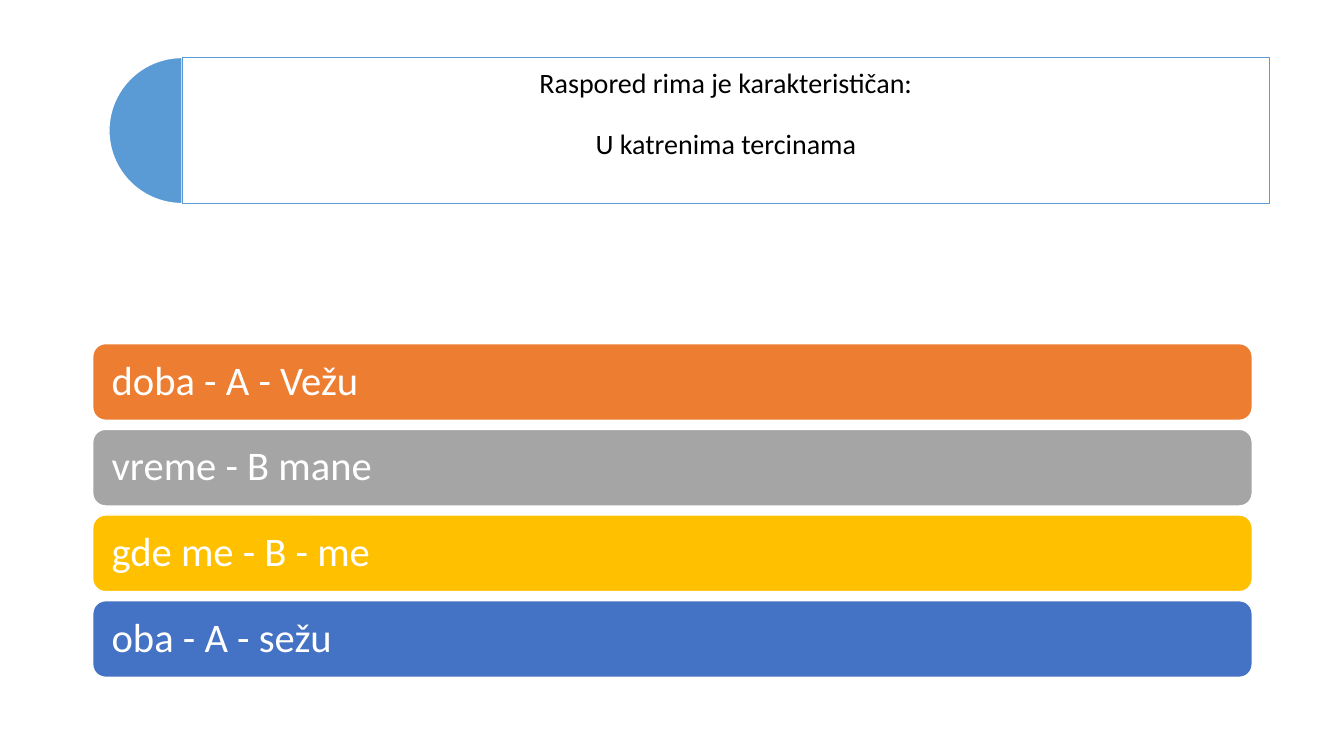
import pptx
import pptx.util
import pptx.dml.color
import pptx.enum.shapes
import pptx.enum.text

Inches, Pt = pptx.util.Inches, pptx.util.Pt
RGBColor = pptx.dml.color.RGBColor
MSO_SHAPE = pptx.enum.shapes.MSO_SHAPE
MSO_ANCHOR = pptx.enum.text.MSO_ANCHOR
PP_ALIGN = pptx.enum.text.PP_ALIGN

WHITE = RGBColor(0xFF, 0xFF, 0xFF)
BLACK = RGBColor(0x00, 0x00, 0x00)
SKY = RGBColor(0x5B, 0x9B, 0xD5)
ORANGE = RGBColor(0xED, 0x7D, 0x31)
GRAY = RGBColor(0xA5, 0xA5, 0xA5)
GOLD = RGBColor(0xFF, 0xC0, 0x00)
BLUE = RGBColor(0x44, 0x72, 0xC4)


class Deck:
    font = "Calibri"

    def __init__(self, prs):
        self.s = prs.slides.add_slide(prs.slide_layouts[5])

    def paint(self, sp, fill, line):
        sp.fill.solid()
        sp.fill.fore_color.rgb = fill
        sp.line.color.rgb = line
        sp.line.width = Pt(1)

    def set_text(self, sp, lines, size, color, align, anchor, inset, gap=0):
        tf = sp.text_frame
        tf.text = "\n".join(lines)
        tf.word_wrap = True
        tf.auto_size = pptx.enum.text.MSO_AUTO_SIZE.NONE
        tf.vertical_anchor = anchor
        tf.margin_left = tf.margin_right = Inches(inset)
        tf.margin_top = tf.margin_bottom = Inches(inset)
        for i, p in enumerate(tf.paragraphs):
            p.alignment = align
            p.line_spacing = 0.9
            p.space_before = Pt(gap if i else 0)
            for r in p.runs:
                r.font.name = self.font
                r.font.size = Pt(size)
                r.font.color.rgb = color

    def shape(self, kind, x, y, w, h, fill):
        sp = self.s.shapes.add_shape(kind, Inches(x), Inches(y), Inches(w), Inches(h))
        sp.shadow.inherit = False
        self.paint(sp, fill, WHITE)
        return sp

    def title(self, x, y, w, h, lines):
        sp = self.s.shapes.title
        sp.left, sp.top, sp.width, sp.height = (Inches(v) for v in (x, y, w, h))
        self.paint(sp, WHITE, SKY)
        self.set_text(sp, lines, 20, BLACK, PP_ALIGN.CENTER, MSO_ANCHOR.TOP, 0.12, gap=22)
        # Bring the title box in front of the half disc
        self.s.shapes.element.append(sp.element)

    def half_disc(self, x, y, size, fill):
        sp = self.shape(MSO_SHAPE.PIE, x, y, size, size, fill)
        sp.adjustments[0] = 54
        sp.adjustments[1] = 162

    def bar(self, x, y, w, h, text, fill):
        sp = self.shape(MSO_SHAPE.ROUNDED_RECTANGLE, x, y, w, h, fill)
        self.set_text(sp, [text], 29, WHITE, PP_ALIGN.LEFT, MSO_ANCHOR.MIDDLE, 0.15)


def main():
    prs = pptx.Presentation()
    prs.slide_width, prs.slide_height = Inches(13.33), Inches(7.5)
    deck = Deck(prs)

    # Title banner
    deck.half_disc(1.08, 0.57, 1.45, SKY)
    deck.title(1.81, 0.57, 10.78, 1.45,
               ["Raspored rima je karakterističan:", "U katrenima tercinama"])

    # Rhyme scheme bars
    rhymes = [("doba - A - Vežu", ORANGE), ("vreme - B mane", GRAY),
              ("gde me - B - me", GOLD), ("oba - A - sežu", BLUE)]
    for i, (text, fill) in enumerate(rhymes):
        deck.bar(0.92, 3.41 + 0.85 * i, 11.5, 0.76, text, fill)

    prs.save("out.pptx")


if __name__ == "__main__":
    main()
